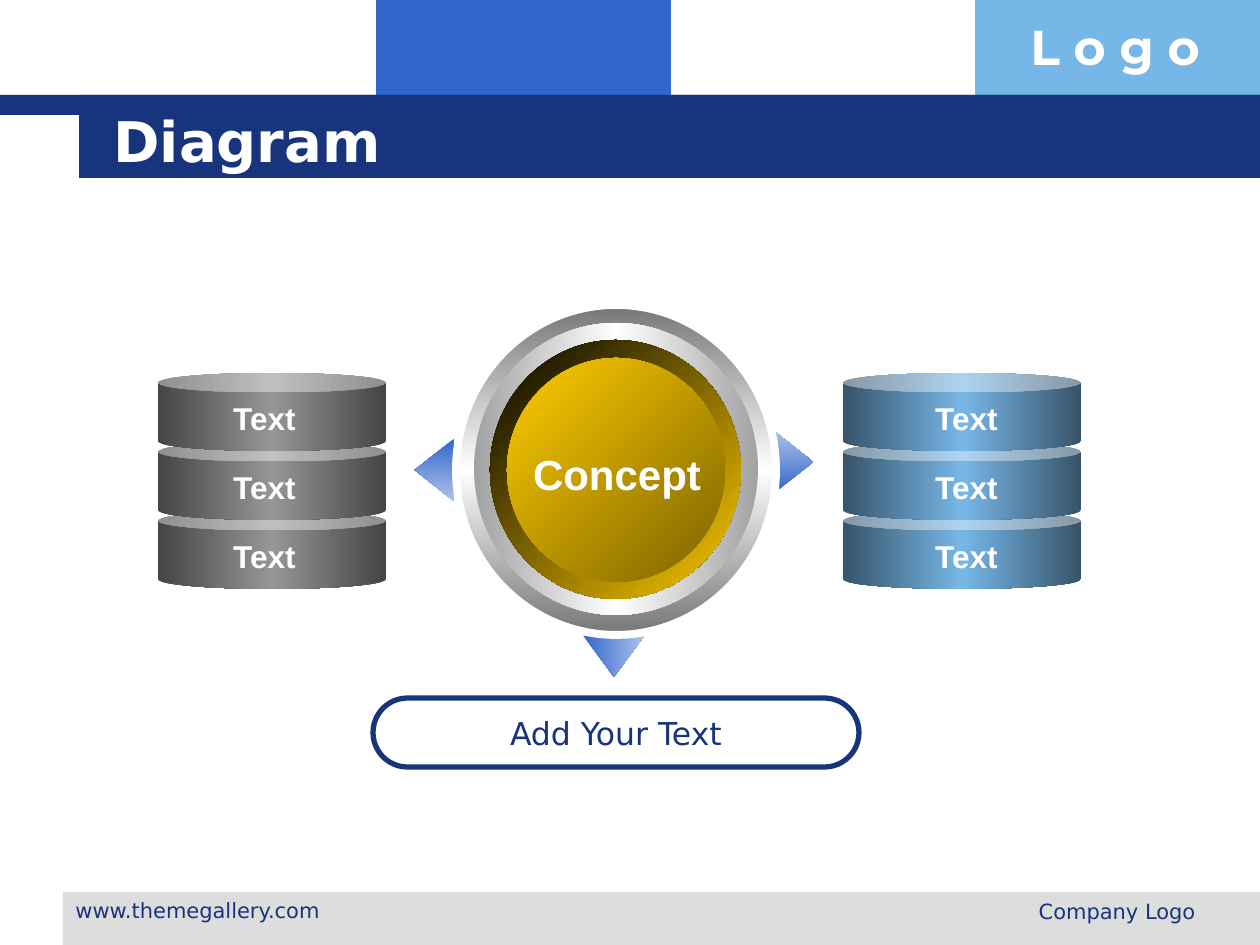
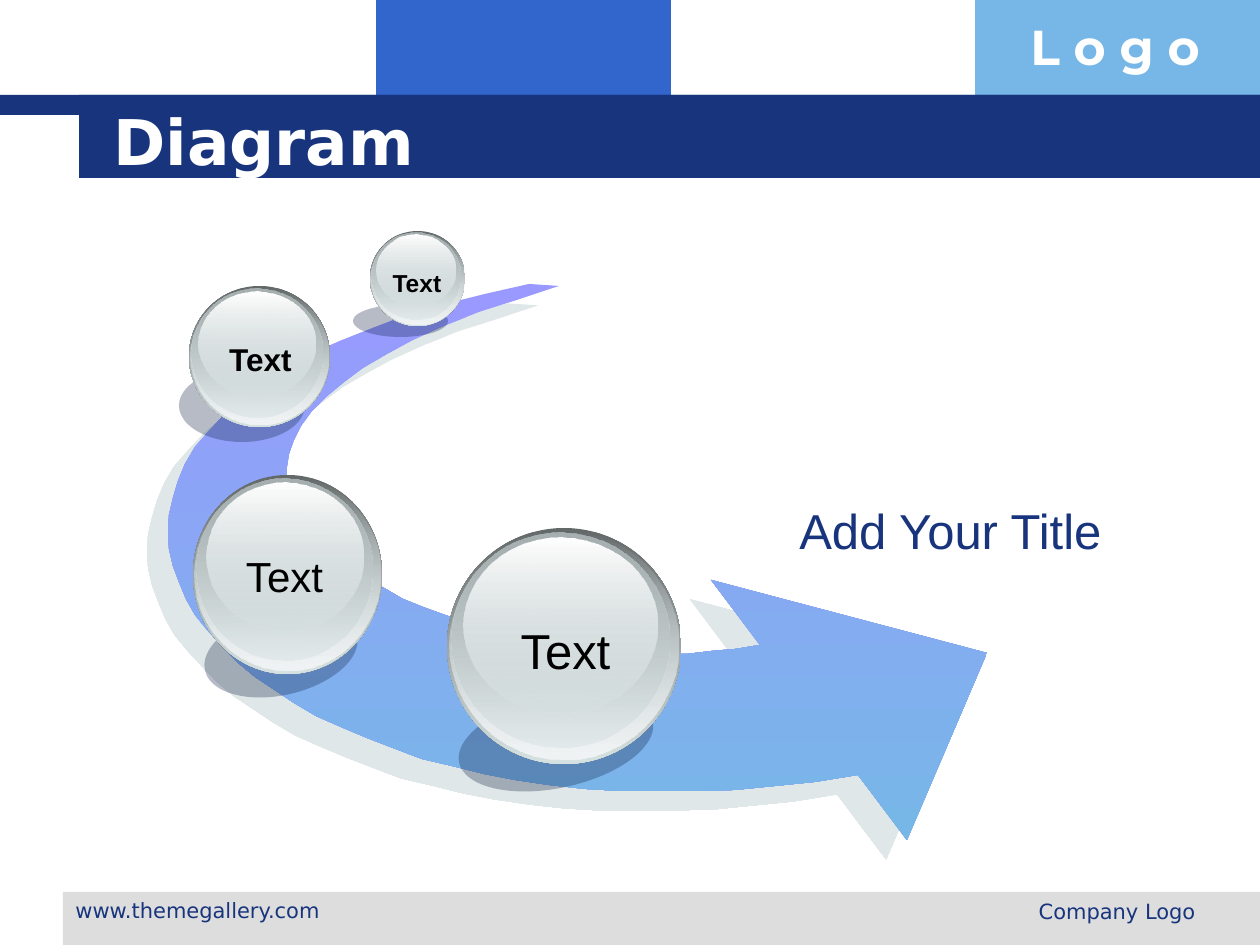
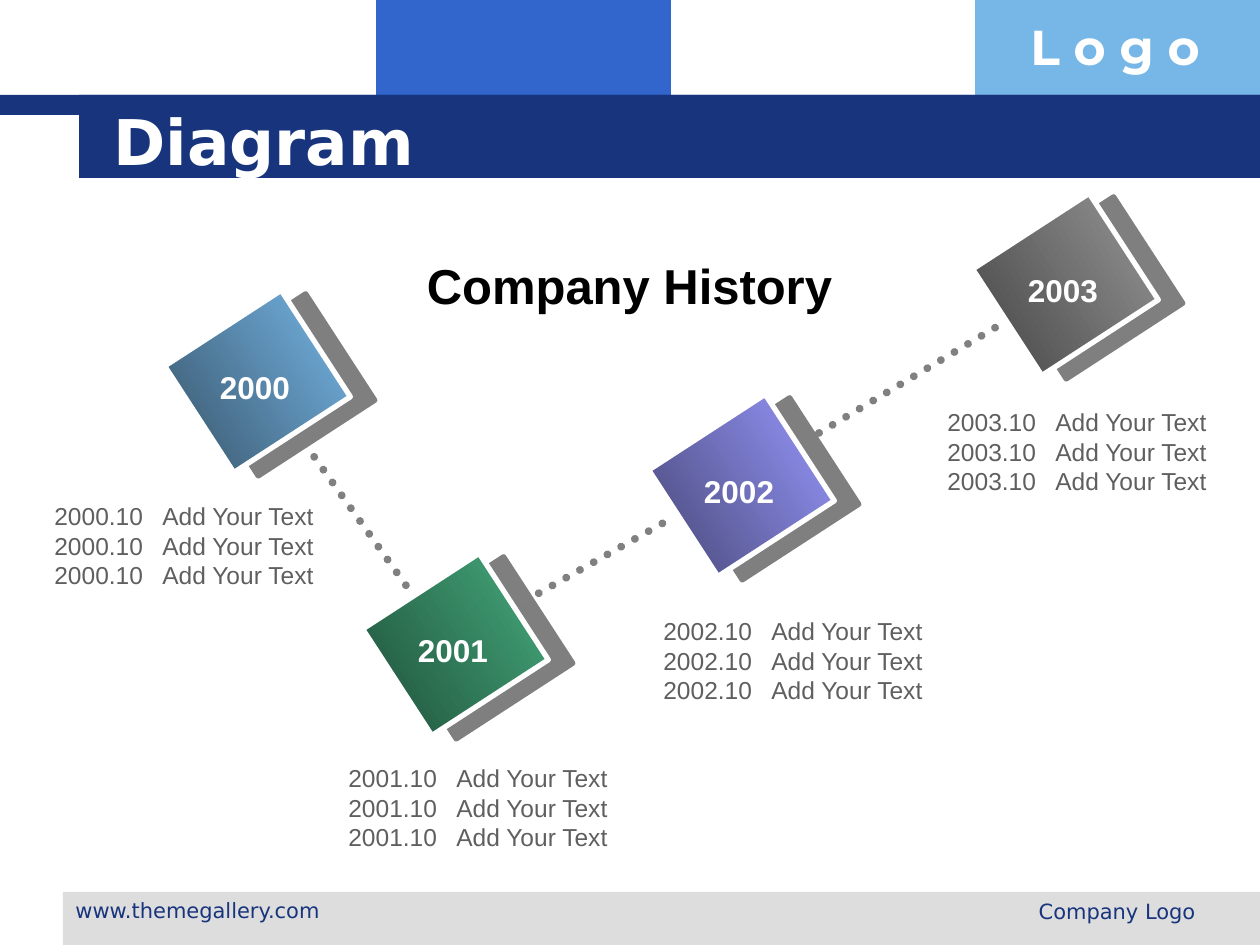
from lxml import etree
from pptx import Presentation
from pptx import util as u
from pptx.dml.color import RGBColor
from pptx.enum import dml, shapes, text
from pptx.oxml import ns

SCALE = 914400 / 126
KIND = shapes.MSO_SHAPE
CENTER = text.PP_ALIGN.CENTER
MIDDLE = text.MSO_ANCHOR.MIDDLE

HUES = {
    "navy": "17347D", "blue": "3366CC", "sky": "77B7E7", "band": "DDDDDD",
    "white": "FFFFFF", "black": "000000", "gold": "FFCC00", "grey": "969696",
    "violet": "9999FF", "green": "45AB7D", "glass": "D6E1E2", "mist": "C1D1D3",
    "ink": "0F2145", "dot": "808080", "note": "5F5F5F",
}

ARROW_OUTLINE = [
    (529, 284), (485, 294), (445, 304), (407, 315), (373, 328), (340, 341),
    (311, 354), (286, 369), (262, 383), (242, 399), (224, 415), (209, 431),
    (195, 447), (185, 464), (178, 481), (173, 498), (169, 515), (168, 532),
    (169, 549), (173, 566), (179, 582), (186, 599), (195, 615), (208, 631),
    (222, 646), (237, 662), (255, 677), (273, 689), (294, 703), (316, 716),
    (341, 727), (367, 738), (393, 748), (422, 759), (452, 766), (484, 774),
    (515, 780), (549, 785), (585, 789), (620, 791), (658, 791), (696, 791),
    (735, 790), (775, 786), (815, 782), (858, 775), (907, 840), (987, 653),
    (711, 580), (760, 645), (736, 649), (712, 651), (687, 654), (663, 654),
    (638, 653), (612, 651), (587, 649), (562, 645), (538, 641), (513, 636),
    (490, 630), (466, 622), (445, 615), (423, 607), (403, 599), (384, 588),
    (367, 578), (350, 567), (336, 557), (323, 544), (311, 533), (302, 520),
    (295, 507), (290, 494), (287, 481), (287, 467), (289, 454), (294, 440),
    (301, 426), (312, 411), (326, 397), (343, 383), (363, 368), (387, 354),
    (413, 340), (444, 326), (479, 312), (517, 300), (559, 286),
]

GLASS_LAYERS = [
    ((0, 0, 1, 1), [("glass", {"shade": 46.28}), "glass"]),
    ((0.01, 0.01, 0.98, 0.97), [("glass", {"alpha": 0}), ("glass", {"tint": 33.33})]),
    ((0.02, 0.02, 0.93, 0.91), [("glass", {"shade": 78.82}), ("glass", {"alpha": 48})]),
    ((0.07, 0.04, 0.83, 0.74), ["white", ("glass", {"alpha": 38})]),
]


def px(length):
    return u.Emu(round(length * SCALE))


def node(parent, tag, **attributes):
    values = {name: str(value) for name, value in attributes.items()}
    return etree.SubElement(parent, ns.qn("a:" + tag), values)


def percent(value):
    return round(value * 1000)


def shaded(hue):
    return hue, {"shade": 46.28}


def write(frame, content, size=18, hue="navy", font="Arial", bold=False,
          align=None, anchor=text.MSO_ANCHOR.TOP, wrap=True, tab=None):
    frame.word_wrap = wrap
    frame.vertical_anchor = anchor
    for index, line in enumerate(content.split("\n")):
        para = frame.paragraphs[0] if index == 0 else frame.add_paragraph()
        para.alignment = align
        if tab:
            stops = node(para._p.get_or_add_pPr(), "tabLst")
            node(stops, "tab", pos=px(tab), algn="l")
        span = para.add_run()
        span.text = line
        span.font.name = font
        span.font.size = u.Pt(size)
        span.font.bold = bold
        span.font.color.rgb = RGBColor.from_string(HUES[hue])


class Pages:
    def __init__(self):
        self.deck = Presentation()
        self.deck.slide_width, self.deck.slide_height = px(1260), px(945)
        self.page = None

    def start(self, title, size=36):
        self.page = self.deck.slides.add_slide(self.deck.slide_layouts[6])
        for area, hue in [((376, 0, 295, 95), "blue"), ((975, 0, 285, 95), "sky"),
                          ((63, 892, 1197, 53), "band"), ((0, 95, 1260, 20), "navy"),
                          ((79, 95, 1181, 83), "navy")]:
            self.shape(KIND.RECTANGLE, area, hue)
        self.label((1018, 10, 242, 72), "L o g o", size=28, hue="white",
                   font="Montserrat", bold=True)
        self.label((63, 891, 294, 44), "www.themegallery.com", size=12, font="DejaVu Sans")
        self.label((809, 892, 399, 44), "Company Logo", size=12, font="DejaVu Sans",
                   align=text.PP_ALIGN.RIGHT)
        self.label((101, 101, 1075, 78), title, size=size, hue="white",
                   font="DejaVu Sans", bold=True, anchor=MIDDLE)

    def label(self, area, content, **style):
        box = self.page.shapes.add_textbox(*map(px, area))
        write(box.text_frame, content, **style)

    def tag(self, area, content, **style):
        self.label(area, content, align=CENTER, wrap=False, **style)

    def shape(self, kind, area, hue=None, alpha=None, line=None, turn=0,
              adjust=(), gradient=None, angle=0):
        box = self.page.shapes.add_shape(kind, *map(px, area))
        box.rotation = turn
        for index, value in enumerate(adjust):
            box.adjustments[index] = value
        self.paint(box, hue, alpha, line, gradient, angle)
        return box

    def paint(self, box, hue=None, alpha=None, line=None, gradient=None, angle=0):
        box.shadow.inherit = False
        if gradient:
            self.blend(box, gradient, angle)
        else:
            box.fill.solid()
            box.fill.fore_color.rgb = RGBColor.from_string(HUES[hue])
            if alpha is not None:
                color = box._element.spPr.find(".//" + ns.qn("a:srgbClr"))
                node(color, "alpha", val=percent(alpha))
        if line:
            box.line.color.rgb = RGBColor.from_string(HUES[line[0]])
            box.line.width = u.Pt(line[1])
        else:
            box.line.fill.background()

    def blend(self, box, stops, angle):
        box.fill.gradient()
        fill = box._element.spPr.find(ns.qn("a:gradFill"))
        fill.clear()
        fill.set("rotWithShape", "1")
        stop_list = node(fill, "gsLst")
        for index, stop in enumerate(stops):
            hue, changes = (stop, {}) if isinstance(stop, str) else stop
            place = node(stop_list, "gs", pos=percent(100 * index / (len(stops) - 1)))
            color = node(place, "srgbClr", val=HUES[hue])
            for change, value in changes.items():
                if change == "alpha":
                    node(color, "alpha", val=percent(value))
                else:
                    node(color, "gamma")
                    node(color, change, val=percent(value))
                    node(color, "invGamma")
        node(fill, "lin", ang=angle * 60000, scaled=1)

    def cast(self, box, hue, distance, direction):
        effects = box._element.spPr.find(ns.qn("a:effectLst"))
        shadow = node(effects, "outerShdw", dist=u.Pt(distance), dir=direction * 60000,
                      algn="ctr", rotWithShape=0)
        node(node(shadow, "srgbClr", val=HUES[hue]), "alpha", val=percent(50))

    def outline(self, points, gradient, angle):
        builder = self.page.shapes.build_freeform(*points[0], scale=SCALE)
        builder.add_line_segments(points[1:], close=True)
        box = builder.convert_to_shape()
        self.paint(box, gradient=gradient, angle=angle)
        return box

    def dots(self, begin, end):
        link = self.page.shapes.add_connector(
            shapes.MSO_CONNECTOR.STRAIGHT, *map(px, begin + end))
        link.line.color.rgb = RGBColor.from_string(HUES["dot"])
        link.line.width = u.Pt(4.5)
        link.line.dash_style = dml.MSO_LINE.ROUND_DOT
        link.line._ln.set("cap", "rnd")
        node(link._element.spPr, "effectLst")

    def pointer(self, area, turn):
        box = self.shape(KIND.UP_ARROW, area, turn=turn, adjust=(0.52, 1),
                         gradient=["blue", ("blue", {"tint": 39.22})])
        box._element.spPr.xfrm.set("flipH", "1")

    def globe(self, area, shade_area, shade_turn):
        self.shape(KIND.OVAL, shade_area, "ink", alpha=30, turn=shade_turn)
        left, top, width, height = area
        for (x, y, w, h), gradient in GLASS_LAYERS:
            layer = (left + x * width, top + y * height, w * width, h * height)
            self.shape(KIND.OVAL, layer, gradient=gradient, angle=90)

    def drum(self, left, width, hue, label_left):
        tops = [373 + 69 * row for row in range(3)]
        for top in reversed(tops):
            self.shape(KIND.CAN, (left, top, width, 78), adjust=(0.25,),
                       gradient=[shaded(hue), hue, shaded(hue)])
        for top in tops:
            self.tag((label_left, top + 20, 91, 50), "Text", hue="white", bold=True)

    def milestone(self, year, tile_at, note_at, hue):
        left, top = tile_at
        tile = self.shape(KIND.RECTANGLE, (left, top, 127, 139), turn=57,
                          line=("white", 3), gradient=[hue, shaded(hue)], angle=90)
        self.cast(tile, "black", 14.1, 8)
        self.tag((left + 13, top + 50, 96, 50), year, hue="white", bold=True)
        entry = f"{year}.10\tAdd Your Text"
        self.label((*note_at, 290, 101), "\n".join([entry] * 3),
                   size=14, hue="note", tab=108)


def concept_page(pages):
    pages.start("Diagram", size=32)
    for area, turn in [((403, 450, 63, 40), 270), ((762, 442, 63, 40), 90),
                       ((583, 635, 62, 42), 180)]:
        pages.pointer(area, turn)
    pages.shape(KIND.OVAL, (456, 305, 320, 330), line=("white", 4.5), angle=90,
                gradient=[shaded("white"), "white", shaded("white")])
    rim = ("white", {"shade": 63.53})
    for area, gradient, angle in [
            ((474, 323, 284, 292), [rim, "white", rim], 0),
            ((490, 340, 251, 259), ["black", "gold"], 45),
            ((507, 358, 218, 224), ["gold", ("gold", {"shade": 48.63})], 45)]:
        pages.shape(KIND.OVAL, area, gradient=gradient, angle=angle)
    pages.drum(158, 228, "grey", 219)
    pages.drum(843, 238, "sky", 921)
    pages.tag((520, 442, 194, 63), "Concept", size=24, hue="white", bold=True)
    pill = pages.shape(KIND.ROUNDED_RECTANGLE, (373, 698, 486, 69), "white",
                       line=("navy", 3), adjust=(0.5,))
    write(pill.text_frame, "Add Your Text", font="DejaVu Sans", align=CENTER,
          anchor=MIDDLE, wrap=False)


def globes_page(pages):
    pages.start("Diagram")
    arrow = pages.outline(ARROW_OUTLINE, ["violet", "sky"], 90)
    pages.cast(arrow, "mist", 16.3, 137)
    pages.label((787, 494, 368, 72), "Add Your Title", size=28)
    for area, shade_area, turn, label_area, size, bold in [
            ((447, 528, 234, 236), (457, 696, 198, 92), -12, (505, 614, 121, 72), 28, False),
            ((193, 475, 189, 199), (203, 611, 156, 84), -13, (231, 544, 107, 63), 24, False),
            ((189, 286, 141, 141), (179, 369, 126, 73), 0, (215, 334, 91, 50), 18, True),
            ((370, 231, 95, 95), (353, 305, 95, 32), 0, (379, 262, 76, 42), 14, True)]:
        pages.globe(area, shade_area, turn)
        pages.tag(label_area, "Text", size=size, hue="black", bold=bold)


def history_page(pages):
    pages.start("Diagram")
    for milestone in [("2003", (1002, 215), (935, 401), "grey"),
                      ("2000", (194, 312), (42, 495), "sky"),
                      ("2001", (392, 575), (336, 757), "green"),
                      ("2002", (678, 416), (651, 610), "violet")]:
        pages.milestone(*milestone)
    for begin, end in [((305, 444), (410, 591)), ((525, 601), (672, 518)),
                       ((819, 433), (998, 326))]:
        pages.dots(begin, end)
    pages.label((346, 249, 567, 72), "Company History", size=28, hue="black",
                bold=True, align=CENTER)


def main():
    pages = Pages()
    concept_page(pages)
    globes_page(pages)
    history_page(pages)
    pages.deck.save("out.pptx")


if __name__ == "__main__":
    main()
